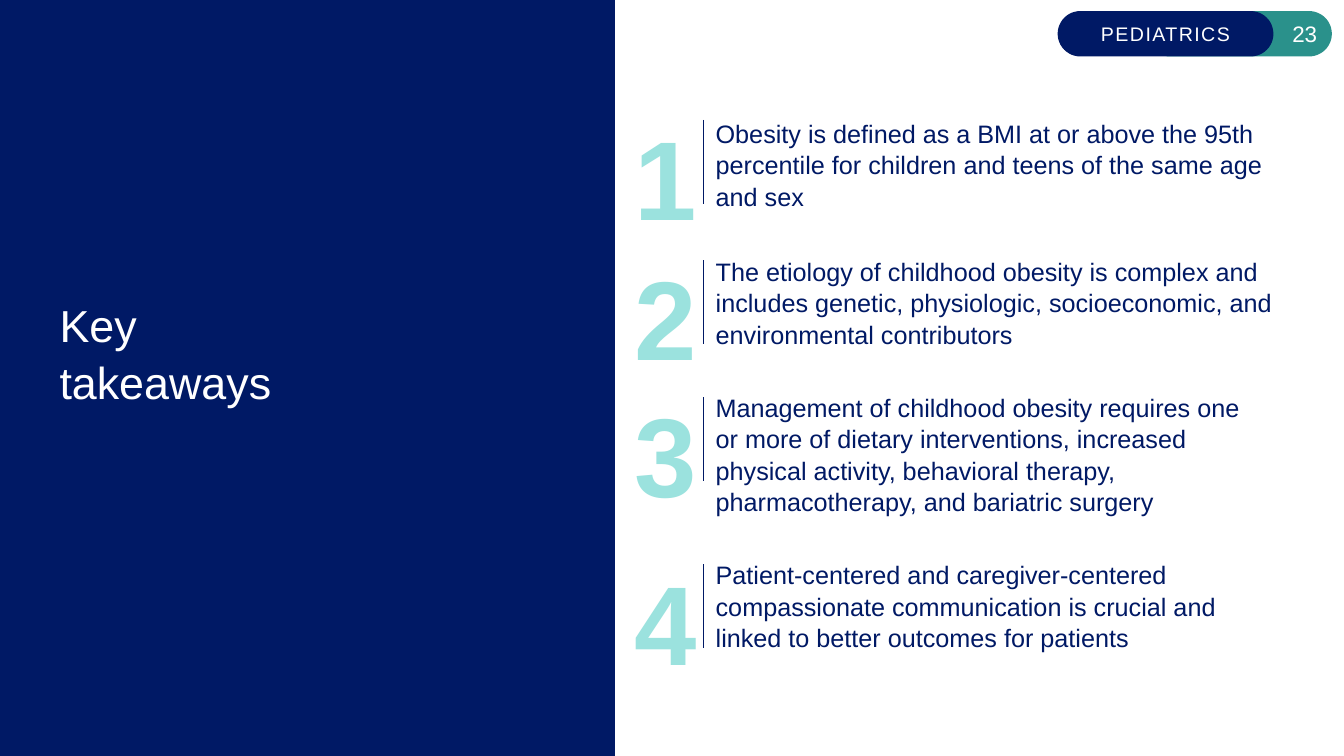
from lxml import etree
from pptx import Presentation
from pptx import util as u
from pptx.dml.color import RGBColor
from pptx.enum import shapes, text
from pptx.oxml.ns import qn

FONT = "Arial"
NAVY, TEAL, MINT, WHITE = "001965", "2A918B", "9BE2DE", "FFFFFF"
NUMBER_LEFT, RULE_LEFT, TEXT_LEFT = 6.29, 6.98, 7
RULE_DROP, RULE_LENGTH = 0.38, 0.83

# number top, text top, text width, text height, wording
TAKEAWAYS = [
    (0.81, 1.11, 5.64, 1.01,
     "Obesity is defined as a BMI at or above the 95th percentile for children "
     "and teens of the same age and sex"),
    (2.2, 2.48, 5.82, 1.01,
     "The etiology of childhood obesity is complex and includes genetic, "
     "physiologic, socioeconomic, and environmental contributors"),
    (3.56, 3.83, 5.56, 1.31,
     "Management of childhood obesity requires one or more of dietary interventions, "
     "increased physical activity, behavioral therapy, pharmacotherapy, and bariatric surgery"),
    (5.22, 5.49, 5.56, 1.01,
     "Patient-centered and caregiver-centered compassionate communication is crucial "
     "and linked to better outcomes for patients"),
]


def color(hex_string):
    """Turn a hex string into a colour."""
    return RGBColor.from_string(hex_string)


def box(left, top, width, height):
    """Return a position and size in inches."""
    return [u.Inches(value) for value in (left, top, width, height)]


def set_margins(frame, horizontal, vertical):
    """Set the inner margins of a text frame in inches."""
    frame.margin_left = frame.margin_right = u.Inches(horizontal)
    frame.margin_top = frame.margin_bottom = u.Inches(vertical)


def write(frame, wording, size, font_color, align=text.PP_ALIGN.LEFT, bold=False, spacing=None):
    """Fill a text frame with one formatted paragraph."""
    frame.text = wording
    paragraph = frame.paragraphs[0]
    paragraph.alignment = align
    paragraph.line_spacing = spacing
    font = paragraph.font
    font.name, font.size, font.bold = FONT, u.Pt(size), bold
    font.color.rgb = color(font_color)
    return paragraph


def add_block(parent, kind, position, fill):
    """Add a filled shape without outline or shadow."""
    shape = parent.add_shape(kind, *box(*position))
    shape.shadow.inherit = False
    shape.fill.solid()
    shape.fill.fore_color.rgb = color(fill)
    shape.line.fill.background()
    return shape


def add_pill(parent, position, fill, wording, size, align):
    """Add a fully rounded label and return its paragraph."""
    pill = add_block(parent, shapes.MSO_SHAPE.ROUNDED_RECTANGLE, position, fill)
    pill.adjustments[0] = 0.5
    frame = pill.text_frame
    frame.vertical_anchor = text.MSO_ANCHOR.MIDDLE
    set_margins(frame, 0.08, 0.04)
    return write(frame, wording, size, WHITE, align)


def add_rule(parent, left, top, length):
    """Add a thin vertical line."""
    rule = parent.add_connector(
        shapes.MSO_CONNECTOR.STRAIGHT,
        u.Inches(left), u.Inches(top), u.Inches(left), u.Inches(top + length))
    rule.line.color.rgb = color(NAVY)
    rule.line.width = u.Pt(1)
    etree.SubElement(rule.element.spPr, qn("a:effectLst"))


def add_takeaway(slide, number, number_top, text_top, width, height, wording):
    """Add a group of a large number, its text and the rule between them."""
    group = slide.shapes.add_group_shape().shapes
    numeral = group.add_textbox(*box(NUMBER_LEFT, number_top, 0.62, 1.47)).text_frame
    set_margins(numeral, 0, 0)
    numeral.word_wrap = False
    write(numeral, str(number), 80, MINT, bold=True, spacing=1.2)

    body = group.add_textbox(*box(TEXT_LEFT, text_top, width, height)).text_frame
    body.word_wrap = True
    write(body, wording, 18, NAVY, spacing=1.04)
    add_rule(group, RULE_LEFT, number_top + RULE_DROP, RULE_LENGTH)


def place_title(slide, wording):
    """Move the title placeholder onto the panel and format it."""
    title = slide.shapes.title
    title.left, title.top, title.width, title.height = box(0.59, 0.45, 5.06, 6.08)
    frame = title.text_frame
    frame.word_wrap = True
    frame.vertical_anchor = text.MSO_ANCHOR.MIDDLE
    set_margins(frame, 0, 0)
    write(frame, wording, 32, WHITE, spacing=1.05)
    slide.shapes.element.append(title.element)


def main():
    """Build and save the slide."""
    presentation = Presentation()
    presentation.slide_width, presentation.slide_height = u.Inches(13.33), u.Inches(7.5)
    slide = presentation.slides.add_slide(presentation.slide_layouts[5])

    add_block(slide.shapes, shapes.MSO_SHAPE.RECTANGLE, (0, 0, 6.1, 7.5), NAVY)
    add_pill(slide.shapes, (11.38, 0.11, 1.83, 0.45), TEAL, "23", 16, text.PP_ALIGN.RIGHT)
    section = add_pill(slide.shapes, (10.49, 0.11, 2.14, 0.45), NAVY, "PEDIATRICS", 14,
                       text.PP_ALIGN.CENTER)
    section.runs[0].font._element.set("spc", "100")
    place_title(slide, "Key\vtakeaways")

    for number, takeaway in enumerate(TAKEAWAYS, start=1):
        add_takeaway(slide, number, *takeaway)
    presentation.save("out.pptx")


if __name__ == "__main__":
    main()
